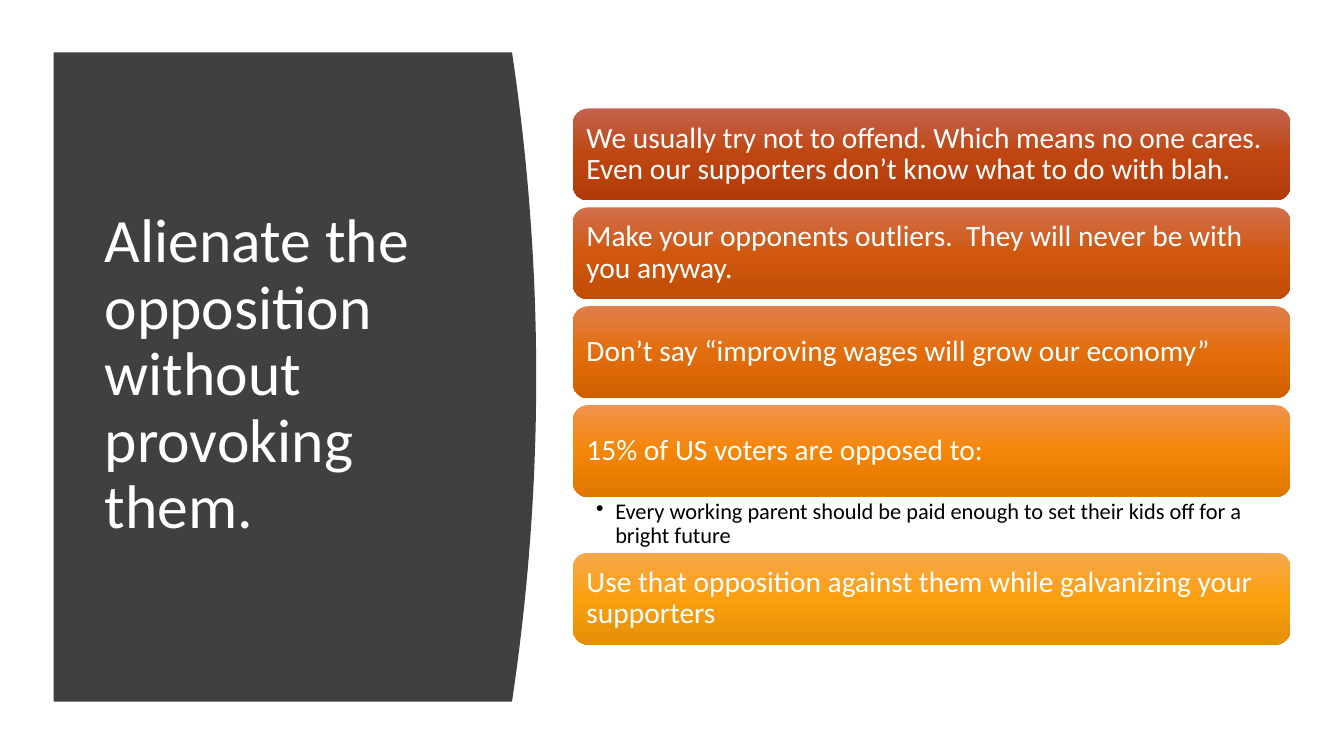
"""Build a slide with a curved title panel and a stack of gradient cards."""
from copy import deepcopy
from dataclasses import dataclass

from pptx import Presentation
from pptx.dml.color import RGBColor
from pptx.enum.shapes import MSO_SHAPE
from pptx.enum.text import MSO_ANCHOR, MSO_AUTO_SIZE, PP_ALIGN
from pptx.oxml.ns import qn
from pptx.slide import Slide
from pptx.text.text import TextFrame
from pptx.util import Inches, Pt

ROUND = MSO_SHAPE.ROUNDED_RECTANGLE
MIDDLE, TOP = MSO_ANCHOR.MIDDLE, MSO_ANCHOR.TOP
LEFT = PP_ALIGN.LEFT
FIXED = MSO_AUTO_SIZE.NONE

WIDE, HIGH = Inches(13.33), Inches(7.5)
FACE = "Calibri"
WHITE = RGBColor(0xFF, 0xFF, 0xFF)
BLACK = RGBColor(0x00, 0x00, 0x00)
SLATE = RGBColor(0x40, 0x40, 0x40)
RUST = (RGBColor(0xC2, 0x63, 0x4D), RGBColor(0xBF, 0x46, 0x11), RGBColor(0xB1, 0x3B, 0x08))
BRICK = (RGBColor(0xD1, 0x6F, 0x4D), RGBColor(0xD0, 0x58, 0x0E), RGBColor(0xC1, 0x4C, 0x05))
COPPER = (RGBColor(0xE1, 0x7F, 0x4C), RGBColor(0xE2, 0x6D, 0x0B), RGBColor(0xD1, 0x60, 0x01))
ORANGE = (RGBColor(0xF1, 0x93, 0x4C), RGBColor(0xF4, 0x86, 0x08), RGBColor(0xDF, 0x77, 0x00))
AMBER = (RGBColor(0xF5, 0xA8, 0x4E), RGBColor(0xFC, 0x9F, 0x0E), RGBColor(0xE5, 0x8F, 0x07))

STACK_X, STACK_Y, STACK_W = 42.63, 14.35, 53.4
CARD_H, PITCH, NOTE_H = 12.17, 13.08, 7.33


@dataclass
class Card:
    """A gradient card with an optional bullet below it."""

    text: str
    tones: tuple[RGBColor, RGBColor, RGBColor]
    note: str = ""


CARDS = [
    Card("We usually try not to offend. Which means no one cares.  "
         "Even our supporters don’t know what to do with blah.", RUST),
    Card("Make your opponents outliers.  They will never be with you anyway.", BRICK),
    Card("Don’t say “improving wages will grow our economy”", COPPER),
    Card("15% of US voters are opposed to:", ORANGE,
         "Every working parent should be paid enough to set their kids off for a bright future"),
    Card("Use that opposition against them while galvanizing your supporters", AMBER),
]


def place(x: float, y: float, w: float, h: float) -> tuple[int, int, int, int]:
    """Turn percentages of the slide into a box."""
    return (round(WIDE * x / 100), round(HIGH * y / 100),
            round(WIDE * w / 100), round(HIGH * h / 100))


def write(frame: TextFrame, text: str, size: int, color: RGBColor,
          pads: tuple[float, float, float, float], anchor: MSO_ANCHOR, bullet: bool = False) -> None:
    """Fill a text frame with one formatted paragraph."""
    frame.word_wrap = True
    frame.auto_size = FIXED
    frame.vertical_anchor = anchor
    (frame.margin_left, frame.margin_top,
     frame.margin_right, frame.margin_bottom) = map(Inches, pads)
    frame.text = text
    para = frame.paragraphs[0]
    if bullet:
        props = para._p.get_or_add_pPr()
        props.set("marL", str(Inches(0.19)))
        props.set("indent", str(Inches(-0.19)))
        mark = props.makeelement(qn("a:buChar"), {"char": "•"})
        props.append(mark)
    para.alignment = LEFT
    para.line_spacing = 0.9
    font = para.font
    font.name, font.size, font.color.rgb = FACE, Pt(size), color


def draw_title(slide: Slide, text: str) -> None:
    """Draw the curved panel and set the title on it."""
    left, top, width, height = place(4, 6.93, 35.9, 85.87)
    bulge = round(WIDE * 0.018)
    steps = 40
    edge = []
    for step in range(steps + 1):
        turn = 2 * step / steps - 1
        edge.append((left + width - round(bulge * turn ** 2), top + round(height * step / steps)))
    outline = slide.shapes.build_freeform(left, top)
    outline.add_line_segments(edge + [(left, top + height)], close=True)
    panel = outline.convert_to_shape()
    panel.shadow.inherit = False
    panel.fill.solid()
    panel.fill.fore_color.rgb = SLATE
    panel.line.fill.background()

    title = slide.shapes.title
    title.left, title.top, title.width, title.height = place(7.05, 14.8, 28.06, 69.87)
    write(title.text_frame, text, 44, WHITE, (0.1, 0.05, 0.1, 0.05), MIDDLE)
    title.element.addprevious(panel.element)


def draw_card(slide: Slide, card: Card, top: float) -> None:
    """Draw one card and its bullet, if any."""
    shape = slide.shapes.add_shape(ROUND, *place(STACK_X, top, STACK_W, CARD_H))
    shape.shadow.inherit = False
    shape.line.fill.background()
    shape.fill.gradient()
    shape.fill.gradient_angle = 270
    stops = shape.element.spPr.find(qn("a:gradFill")).find(qn("a:gsLst"))
    stops.append(deepcopy(stops[0]))
    for stop, tone, spot in zip(shape.fill.gradient_stops, card.tones, (0, 0.5, 1)):
        stop.color.rgb = tone
        stop.position = spot
    write(shape.text_frame, card.text, 21, WHITE, (0.09,) * 4, MIDDLE)
    if card.note:
        box = slide.shapes.add_textbox(*place(STACK_X, top + CARD_H, STACK_W, NOTE_H))
        write(box.text_frame, card.note, 16, BLACK, (0.23, 0.03, 0.16, 0.03), TOP, bullet=True)


def main() -> None:
    """Build and save the slide."""
    deck = Presentation()
    deck.slide_width, deck.slide_height = WIDE, HIGH
    slide = deck.slides.add_slide(deck.slide_layouts[5])
    draw_title(slide, "Alienate the opposition without provoking them.")
    top = STACK_Y
    for card in CARDS:
        draw_card(slide, card, top)
        top += CARD_H + NOTE_H if card.note else PITCH
    deck.save("out.pptx")


if __name__ == "__main__":
    main()
